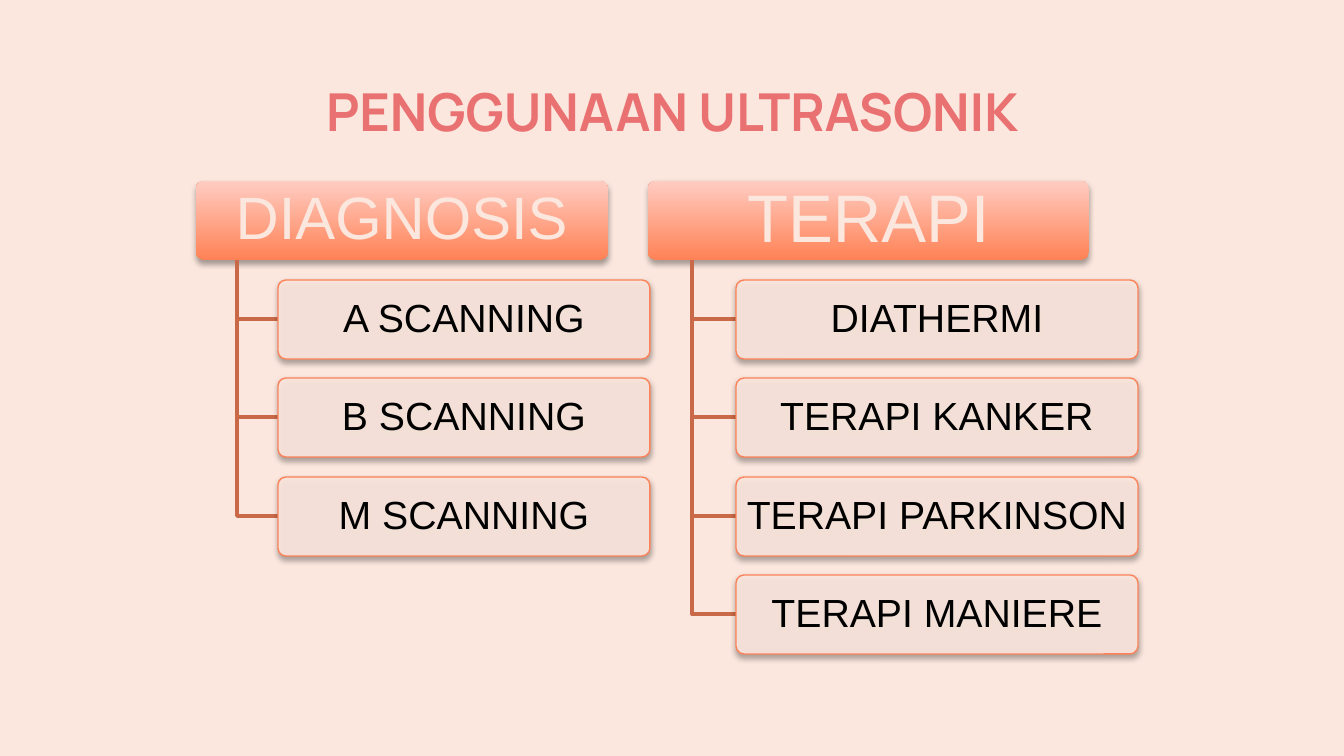
from dataclasses import dataclass

from lxml import etree
from pptx import Presentation
from pptx.dml.color import RGBColor
from pptx.enum.shapes import MSO_SHAPE
from pptx.enum.text import MSO_ANCHOR, MSO_AUTO_SIZE, PP_ALIGN
from pptx.oxml.ns import qn
from pptx.shapes.autoshape import Shape
from pptx.slide import Slide
from pptx.util import Emu, Pt

ROUNDED = MSO_SHAPE.ROUNDED_RECTANGLE
CENTER = PP_ALIGN.CENTER
MIDDLE, TOP = MSO_ANCHOR.MIDDLE, MSO_ANCHOR.TOP
NO_AUTOFIT = MSO_AUTO_SIZE.NONE

EMU_PER_PX = 914400 / 134.4
TITLE_ONLY_LAYOUT = 5

# Shared vertical grid, in px
HEADER_TOP = 181
BOX_HEIGHT = 79
FIRST_ITEM_TOP = 280
ITEM_PITCH = 295 / 3


@dataclass(frozen=True)
class Theme:
    background: str = "FBE7DE"
    title: str = "E97171"
    header_bottom: str = "FF8256"
    header_top: str = "FFCCC2"
    item_border: str = "FC8359"
    branch: str = "CA6947"
    item_text: str = "000000"
    title_font: str = "Manrope"
    body_font: str = "Arial"
    title_size: int = 28
    item_size: int = 21


@dataclass(frozen=True)
class Column:
    heading: str
    heading_size: int
    left: int
    width: int
    item_width: int
    items: tuple[str, ...]

    @property
    def indent(self) -> int:
        return round(self.width / 10)


THEME = Theme()
COLUMNS = (
    Column("DIAGNOSIS", 32, 196, 412, 372,
           ("A SCANNING", "B SCANNING", "M SCANNING")),
    Column("TERAPI", 36, 648, 441, 402,
           ("DIATHERMI", "TERAPI KANKER", "TERAPI PARKINSON", "TERAPI MANIERE")),
)


def px(length: int) -> Emu:
    return Emu(round(length * EMU_PER_PX))


def color(value: str) -> RGBColor:
    return RGBColor.from_string(value)


def write_text(shape: Shape, text: str, font: str, size: int, text_color: str,
               inset: int, anchor: MSO_ANCHOR, bold: bool = False) -> None:
    frame = shape.text_frame
    frame.word_wrap = True
    frame.auto_size = NO_AUTOFIT
    frame.vertical_anchor = anchor
    frame.margin_left = frame.margin_right = px(inset)
    frame.margin_top = frame.margin_bottom = px(inset)
    paragraph = frame.paragraphs[0]
    paragraph.alignment = CENTER
    run = paragraph.add_run()
    run.text = text
    run.font.name = font
    run.font.size = Pt(size)
    run.font.bold = bold
    run.font.color.rgb = color(text_color)


def add_soft_shadow(shape: Shape) -> None:
    shape.shadow.inherit = False
    effects = shape._element.spPr.find(qn("a:effectLst"))
    shadow = etree.SubElement(effects, qn("a:outerShdw"), blurRad=str(Pt(3.1)),
                              dist=str(Pt(1.8)), dir="5400000", rotWithShape="0")
    shade = etree.SubElement(shadow, qn("a:srgbClr"), val="000000")
    etree.SubElement(shade, qn("a:alpha"), val="35000")


def add_box(slide: Slide, left: int, top: int, width: int) -> Shape:
    shape = slide.shapes.add_shape(ROUNDED, px(left), px(top), px(width), px(BOX_HEIGHT))
    shape.adjustments[0] = 0.1
    add_soft_shadow(shape)
    return shape


def add_header(slide: Slide, column: Column) -> None:
    shape = add_box(slide, column.left, HEADER_TOP, column.width)
    shape.fill.gradient()
    shape.fill.gradient_angle = 90
    stops = shape.fill.gradient_stops
    for stop, value in zip(stops, (THEME.header_bottom, THEME.header_top)):
        stop.color.rgb = color(value)
    shape.line.fill.background()
    write_text(shape, column.heading, THEME.body_font, column.heading_size,
               THEME.background, 8, MIDDLE)
    shape.text_frame.paragraphs[0].line_spacing = 0.9


def add_item(slide: Slide, text: str, left: int, top: int, width: int) -> None:
    shape = add_box(slide, left, top, width)
    shape.fill.solid()
    shape.fill.fore_color.rgb = color(THEME.background)
    fill_color = shape._element.spPr.find(qn("a:solidFill")).find(qn("a:srgbClr"))
    etree.SubElement(fill_color, qn("a:alpha"), val="90000")
    shape.line.color.rgb = color(THEME.item_border)
    shape.line.width = Pt(0.75)
    write_text(shape, text, THEME.body_font, THEME.item_size, THEME.item_text, 7, MIDDLE)
    shape.text_frame.paragraphs[0].line_spacing = 0.9


def add_branch(slide: Slide, trunk: int, item_left: int, item_middle: int) -> None:
    builder = slide.shapes.build_freeform(trunk, HEADER_TOP + BOX_HEIGHT, scale=EMU_PER_PX)
    builder.add_line_segments([(trunk, item_middle), (item_left, item_middle)], close=False)
    branch = builder.convert_to_shape()
    branch.shadow.inherit = False
    branch.fill.background()
    branch.line.color.rgb = color(THEME.branch)
    branch.line.width = Pt(2)


def add_column(slide: Slide, column: Column) -> None:
    add_header(slide, column)
    trunk = column.left + column.indent
    item_left = trunk + column.indent
    for index, text in enumerate(column.items):
        top = round(FIRST_ITEM_TOP + index * ITEM_PITCH)
        add_branch(slide, trunk, item_left, top + BOX_HEIGHT // 2)
        add_item(slide, text, item_left, top, column.item_width)


def main() -> None:
    presentation = Presentation()
    presentation.slide_width, presentation.slide_height = px(1344), px(756)
    slide = presentation.slides.add_slide(presentation.slide_layouts[TITLE_ONLY_LAYOUT])
    slide.background.fill.solid()
    slide.background.fill.fore_color.rgb = color(THEME.background)

    # Title
    title = slide.shapes.title
    title.left, title.top, title.width, title.height = px(79), px(66), px(1186), px(85)
    write_text(title, "PENGGUNAAN ULTRASONIK", THEME.title_font, THEME.title_size,
               THEME.title, 13, TOP, bold=True)

    # Hierarchy columns
    for column in COLUMNS:
        add_column(slide, column)

    presentation.save("out.pptx")


if __name__ == "__main__":
    main()
